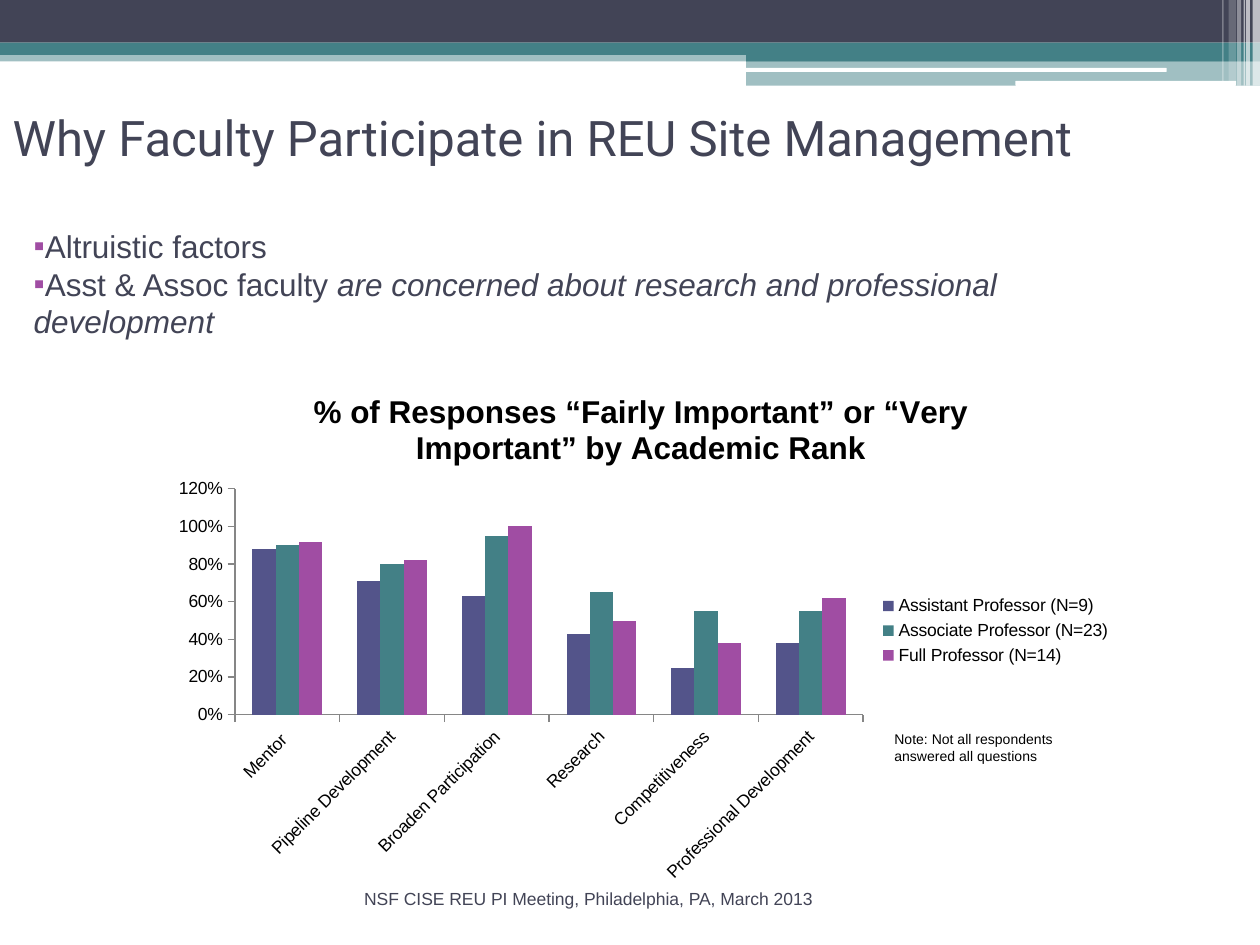
"""Build the slide on why faculty take part in REU site management."""
from dataclasses import dataclass

from lxml import etree
from pptx import Presentation
from pptx import util as u
from pptx.chart.data import CategoryChartData
from pptx.dml.color import RGBColor
from pptx.enum import chart as charts, shapes, text
from pptx.oxml import ns


@dataclass(frozen=True)
class Theme:
    font: str = "Arial"
    title_font: str = "Roboto"
    dark: str = "424456"
    teal: str = "438086"
    purple: str = "A04DA3"
    indigo: str = "53548A"
    axis: str = "868686"
    white: str = "FFFFFF"
    black: str = "000000"
    title_size: int = 28
    body_size: int = 18
    label_size: int = 10
    note_size: int = 8


@dataclass(frozen=True)
class Box:
    left: float
    top: float
    width: float
    height: float

    def lengths(self) -> tuple:
        return tuple(u.Cm(n) for n in (self.left, self.top, self.width, self.height))


@dataclass(frozen=True)
class Band:
    box: Box
    color: str
    opacity: int = 100
    rounded: bool = False


@dataclass(frozen=True)
class Series:
    name: str
    color: str
    values: tuple


THEME = Theme()

BANDS = (
    Band(Box(0, 1.02, 25.4, 0.22), THEME.teal, 50),
    Band(Box(0, 0, 25.4, 0.86), THEME.dark),
    Band(Box(0, 0.86, 25.4, 0.25), THEME.teal),
    Band(Box(15.04, 0.99, 10.36, 0.25), THEME.teal),
    Band(Box(15.04, 1.22, 10.36, 0.51), THEME.teal, 50),
    Band(Box(15.01, 1.37, 8.51, 0.08), THEME.white, rounded=True),
    Band(Box(20.47, 1.63, 4.45, 0.1), THEME.white, rounded=True),
    Band(Box(25.25, 0, 0.15, 1.73), THEME.white, 65),
    Band(Box(25.12, 0, 0.08, 1.73), THEME.white, 65),
    Band(Box(25.07, 0, 0.03, 1.73), THEME.white, 60),
    Band(Box(24.94, 0, 0.08, 1.73), THEME.white, 40),
    Band(Box(24.77, 0, 0.15, 1.63), THEME.white, 20),
    Band(Box(24.64, 0, 0.03, 1.63), THEME.white, 30),
)

CATEGORIES = ("Mentor ", "Pipeline Development", "Broaden Participation",
              "Research", "Competitiveness", "Professional Development")
SERIES = (
    Series("Assistant Professor (N=9)", THEME.indigo, (0.88, 0.71, 0.63, 0.43, 0.25, 0.38)),
    Series("Associate Professor (N=23)", THEME.teal, (0.9, 0.8, 0.95, 0.65, 0.55, 0.55)),
    Series("Full Professor (N=14)", THEME.purple, (0.92, 0.82, 1, 0.5, 0.38, 0.62)),
)
CHART_TITLE = "% of Responses “Fairly Important” or “Very Important” by Academic Rank"


def apply(target, **values) -> None:
    for name, value in values.items():
        setattr(target, name, value)


def style_font(font, size: int, color: str = THEME.black, name: str = THEME.font, **extra) -> None:
    apply(font, size=u.Pt(size), name=name, **extra)
    font.color.rgb = RGBColor.from_string(color)


def draw_band(slide, band: Band) -> None:
    kind = shapes.MSO_SHAPE.ROUNDED_RECTANGLE if band.rounded else shapes.MSO_SHAPE.RECTANGLE
    shape = slide.shapes.add_shape(kind, *band.box.lengths())
    shape.shadow.inherit = False
    shape.line.fill.background()
    shape.fill.solid()
    shape.fill.fore_color.rgb = RGBColor.from_string(band.color)
    if band.opacity < 100:
        color = shape.fill._xPr.find(".//" + ns.qn("a:srgbClr"))
        etree.SubElement(color, ns.qn("a:alpha"), val=str(band.opacity * 1000))


def add_run(paragraph, words: str, size: int, color: str, **extra) -> None:
    run = paragraph.add_run()
    run.text = words
    style_font(run.font, size, color, **extra)


def add_bullet(paragraph) -> None:
    properties = paragraph._p.get_or_add_pPr()
    apply_values = {"marL": "0", "indent": "0"}
    for name, value in apply_values.items():
        properties.set(name, value)
    color = etree.SubElement(properties, ns.qn("a:buClr"))
    etree.SubElement(color, ns.qn("a:srgbClr"), val=THEME.purple)
    etree.SubElement(properties, ns.qn("a:buFont"), typeface=THEME.font)
    etree.SubElement(properties, ns.qn("a:buChar"), char="▪")


def add_text(slide, box: Box, paragraphs: tuple, size: int, color: str,
             bullets: bool = False, align=text.PP_ALIGN.LEFT) -> None:
    frame = slide.shapes.add_textbox(*box.lengths()).text_frame
    frame.word_wrap = True
    for index, runs in enumerate(paragraphs):
        paragraph = frame.add_paragraph() if index else frame.paragraphs[0]
        paragraph.alignment = align
        if bullets:
            add_bullet(paragraph)
        for words, italic in runs:
            add_run(paragraph, words, size, color, italic=italic)


def set_title(slide, box: Box, words: str) -> None:
    title = slide.shapes.title
    apply(title, **dict(zip(("left", "top", "width", "height"), box.lengths())))
    apply(title.text_frame, word_wrap=True, vertical_anchor=text.MSO_ANCHOR.MIDDLE)
    paragraph = title.text_frame.paragraphs[0]
    paragraph.alignment = text.PP_ALIGN.LEFT
    add_run(paragraph, words, THEME.title_size, THEME.dark, name=THEME.title_font)


def set_plot_area(chart, **fractions: float) -> None:
    area = chart._chartSpace.chart.plotArea
    for old in area.findall(ns.qn("c:layout")):
        area.remove(old)
    layout = etree.Element(ns.qn("c:layout"))
    manual = etree.SubElement(layout, ns.qn("c:manualLayout"))
    values = {"layoutTarget": "inner", "xMode": "edge", "yMode": "edge", **fractions}
    for name, value in values.items():
        etree.SubElement(manual, ns.qn(f"c:{name}"), val=str(value))
    area.insert(0, layout)


def add_rank_chart(slide, box: Box) -> None:
    data = CategoryChartData(number_format="0%")
    data.categories = CATEGORIES
    for series in SERIES:
        data.add_series(series.name, series.values)
    kind = charts.XL_CHART_TYPE.COLUMN_CLUSTERED
    chart = slide.shapes.add_chart(kind, *box.lengths(), data).chart
    style_font(chart.font, THEME.label_size)
    chart.has_title = True
    add_run(chart.chart_title.text_frame.paragraphs[0], CHART_TITLE,
            THEME.body_size, THEME.black, bold=True)
    chart.has_legend = True
    apply(chart.legend, position=charts.XL_LEGEND_POSITION.RIGHT, include_in_layout=False)
    style_font(chart.legend.font, THEME.label_size)
    apply(chart.plots[0], gap_width=150, overlap=0, vary_by_categories=False)
    for drawn, series in zip(chart.plots[0].series, SERIES):
        drawn.format.fill.solid()
        drawn.format.fill.fore_color.rgb = RGBColor.from_string(series.color)
    for axis in (chart.category_axis, chart.value_axis):
        apply(axis, has_major_gridlines=False, major_tick_mark=charts.XL_TICK_MARK.OUTSIDE)
        axis.format.line.color.rgb = RGBColor.from_string(THEME.axis)
        style_font(axis.tick_labels.font, THEME.label_size)
    apply(chart.value_axis, minimum_scale=0, maximum_scale=1.2, major_unit=0.2)
    apply(chart.value_axis.tick_labels, number_format="0%", number_format_is_linked=False)
    label_body = chart.category_axis._element.find(".//" + ns.qn("a:bodyPr"))
    label_body.set("rot", "-2700000")
    set_plot_area(chart, x=0.08, y=0.23, w=0.65, h=0.43)


def main() -> None:
    presentation = Presentation()
    apply(presentation, slide_width=u.Cm(25.4), slide_height=u.Cm(19.05))
    slide = presentation.slides.add_slide(presentation.slide_layouts.get_by_name("Title Only"))
    for band in BANDS:
        draw_band(slide, band)
    set_title(slide, Box(0, 1.27, 25.4, 2.97), "Why Faculty Participate in REU Site Management")
    add_text(slide, Box(5.51, 17.78, 12.7, 1.27),
             ((("NSF CISE REU PI Meeting, Philadelphia, PA, March 2013", False),),),
             THEME.label_size, THEME.dark, align=text.PP_ALIGN.CENTER)
    add_rank_chart(slide, Box(3.18, 7.42, 19.48, 10.59))
    add_text(slide, Box(0.43, 4.45, 23.5, 2.57),
             ((("Altruistic factors", False),),
              (("Asst & Assoc faculty ", False),
               ("are concerned about research and professional development", True))),
             THEME.body_size, THEME.dark, bullets=True)
    add_text(slide, Box(17.78, 14.61, 4.88, 0.94),
             ((("Note: Not all respondents answered all questions", False),),),
             THEME.note_size, THEME.black)
    presentation.save("out.pptx")


if __name__ == "__main__":
    main()
